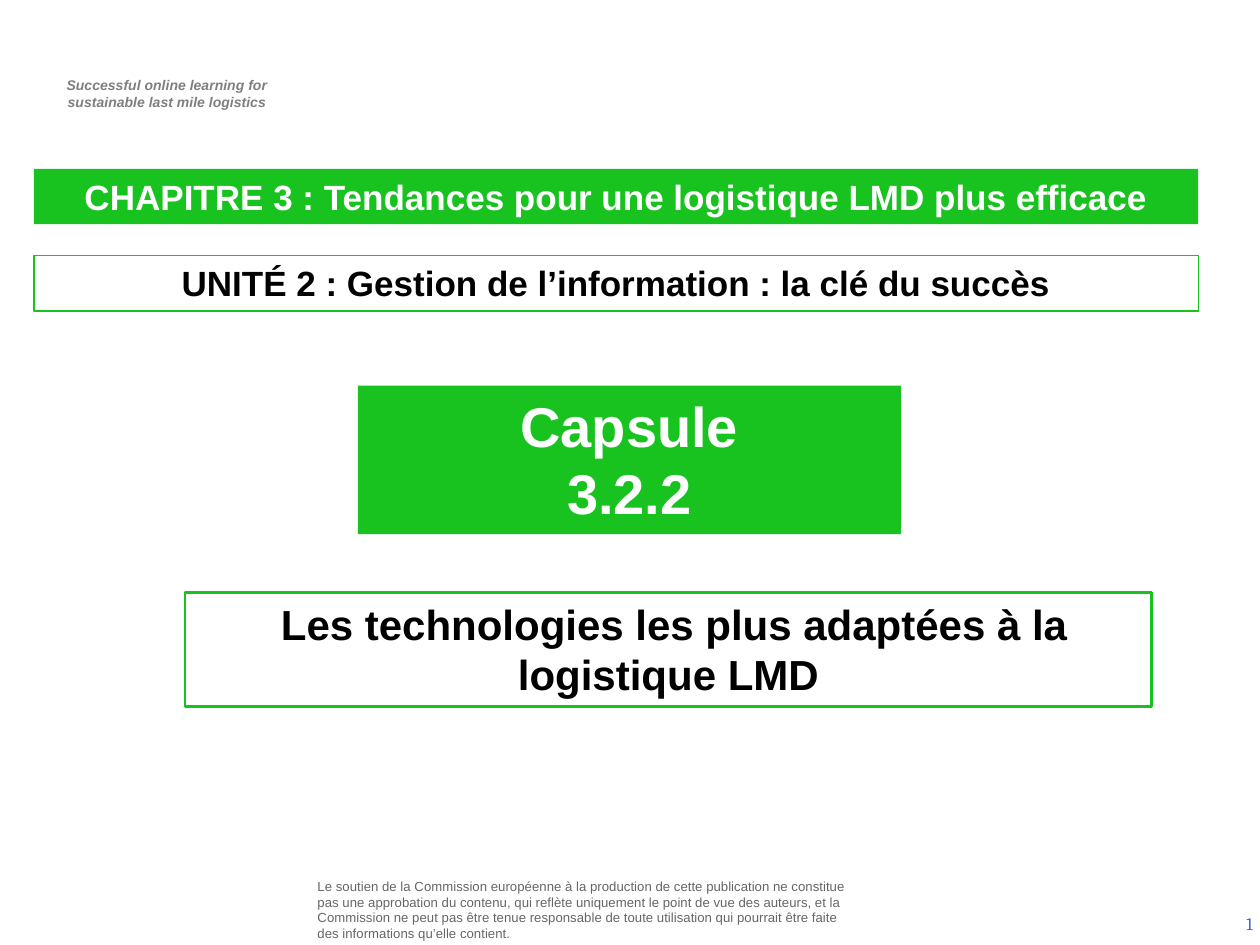
from dataclasses import dataclass

from pptx import Presentation
from pptx.dml.color import RGBColor
from pptx.enum.shapes import MSO_SHAPE
from pptx.enum.text import MSO_ANCHOR as Anchor, PP_ALIGN as Align
from pptx.util import Inches, Pt


@dataclass(frozen=True)
class Theme:
    green: str = "18C320"
    white: str = "FFFFFF"
    black: str = "000000"
    tagline_gray: str = "7F7F7F"
    notice_gray: str = "666666"
    number_blue: str = "3366CC"
    font: str = "Arial"
    number_font: str = "Cambria"
    capsule_size: float = 32
    topic_size: float = 24
    heading_size: float = 20
    number_size: float = 10
    tagline_size: float = 8
    notice_size: float = 7.5


THEME = Theme()


def write(shape, text, size, color, align=Align.CENTER, anchor=Anchor.TOP,
          font=THEME.font, bold=False, italic=False, insets=(0.1, 0.05, 0.1, 0.05)):
    """Fill a shape with text; insets are left, top, right, bottom in inches."""
    frame = shape.text_frame
    frame.text = text
    frame.word_wrap = True
    frame.vertical_anchor = anchor
    (frame.margin_left, frame.margin_top,
     frame.margin_right, frame.margin_bottom) = map(Inches, insets)
    for para in frame.paragraphs:
        para.alignment = align
        for span in para.runs:
            span.font.name = font
            span.font.size = Pt(size)
            span.font.bold = bold
            span.font.italic = italic
            span.font.color.rgb = RGBColor.from_string(color)


def add_label(page, bounds, text, size, color, **style):
    box = page.shapes.add_textbox(*map(Inches, bounds))
    write(box, text, size, color, **style)


def add_banner(page, bounds, text, size, outline=None):
    """Add a green bar with white text, or a green frame if outline is a width."""
    banner = page.shapes.add_shape(MSO_SHAPE.RECTANGLE, *map(Inches, bounds))
    banner.shadow.inherit = False
    green = RGBColor.from_string(THEME.green)
    if outline is None:
        banner.fill.solid()
        banner.fill.fore_color.rgb = green
        banner.line.fill.background()
    else:
        banner.fill.background()
        banner.line.color.rgb = green
        banner.line.width = Pt(outline)
    color = THEME.white if outline is None else THEME.black
    write(banner, text, size, color, bold=True)


def add_furniture(page):
    add_label(page, (0.29, 0.56, 2.03, 0.37),
              "Successful online learning for\nsustainable last mile logistics",
              THEME.tagline_size, THEME.tagline_gray, bold=True, italic=True,
              insets=(0.14, 0.05, 0.1, 0.05))
    add_label(page, (2.48, 7.03, 4.27, 0.5),
              "Le soutien de la Commission européenne à la production de cette "
              "publication ne constitue pas une approbation du contenu, qui reflète "
              "uniquement le point de vue des auteurs, et la Commission ne peut pas "
              "être tenue responsable de toute utilisation qui pourrait être faite "
              "des informations qu’elle contient.",
              THEME.notice_size, THEME.notice_gray, align=Align.LEFT,
              anchor=Anchor.MIDDLE, insets=(0.04, 0.04, 0.04, 0.16))
    add_label(page, (7.71, 7.13, 2.33, 0.4), "1", THEME.number_size,
              THEME.number_blue, align=Align.RIGHT, anchor=Anchor.MIDDLE,
              font=THEME.number_font)


def main():
    deck = Presentation()
    deck.slide_width, deck.slide_height = Inches(10), Inches(7.5)
    page = deck.slides.add_slide(deck.slide_layouts[6])

    add_furniture(page)
    add_banner(page, (2.84, 3.06, 4.31, 1.18), "Capsule\n3.2.2", THEME.capsule_size)
    add_banner(page, (1.47, 4.7, 7.67, 0.91),
               " Les technologies les plus adaptées à la logistique LMD",
               THEME.topic_size, outline=1.5)
    add_banner(page, (0.27, 1.34, 9.24, 0.44),
               "CHAPITRE 3 : Tendances pour une logistique LMD plus efficace",
               THEME.heading_size)
    add_banner(page, (0.27, 2.03, 9.24, 0.44),
               "UNITÉ 2 : Gestion de l’information : la clé du succès",
               THEME.heading_size, outline=0.75)

    deck.save("out.pptx")


if __name__ == "__main__":
    main()
